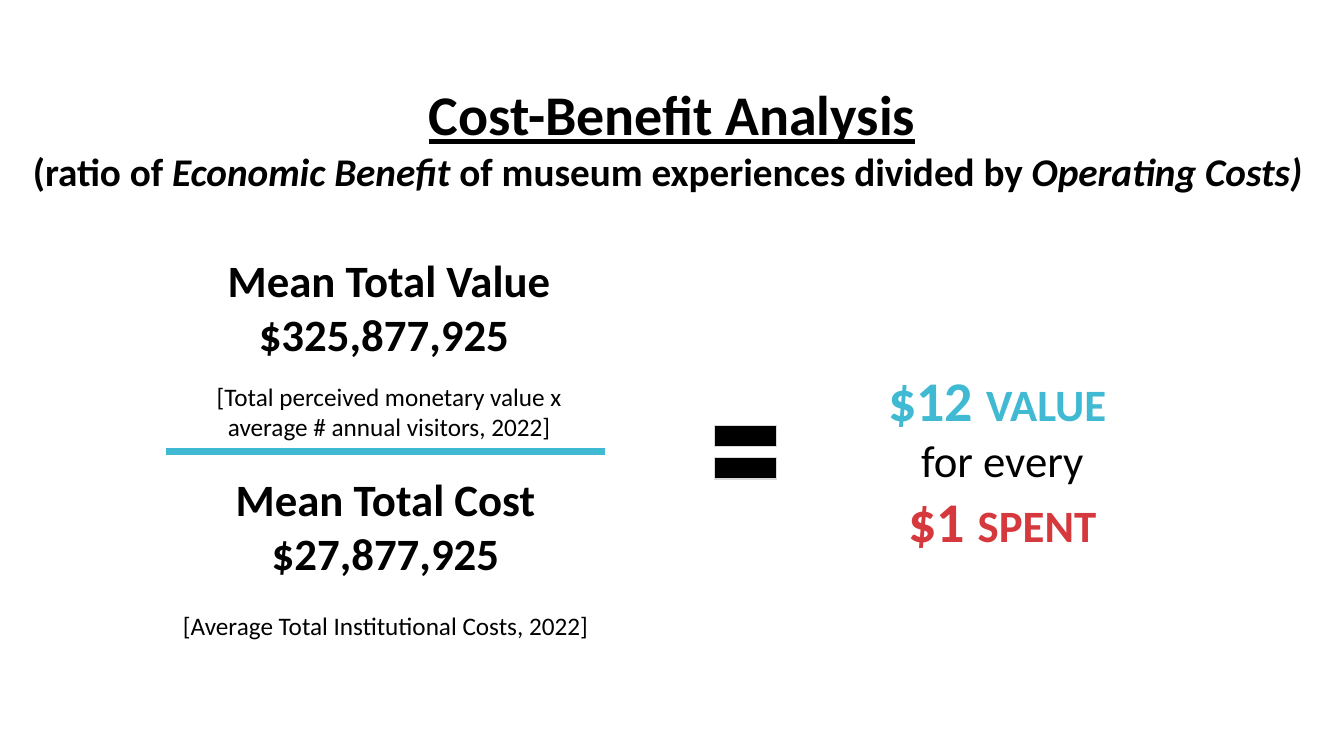
from pptx import Presentation, util as u
from pptx.dml.color import RGBColor
from pptx.enum import shapes, text
from pptx.oxml.ns import qn
from lxml import etree

Pt = u.Pt
HUES = {"black": "000000", "teal": "40BAD2", "red": "D5393D", "edge": "D9D9D9"}


def hue(name):
    return RGBColor.from_string(HUES[name])


def write(shape, box, paras):
    """Place a shape and fill it with (space before, runs) paragraphs."""
    shape.left, shape.top, shape.width, shape.height = [Pt(v) for v in box]
    frame = shape.text_frame
    frame.word_wrap = True
    frame.auto_size = text.MSO_AUTO_SIZE.NONE
    frame.vertical_anchor = text.MSO_ANCHOR.TOP
    for i, (gap, runs) in enumerate(paras):
        para = frame.add_paragraph() if i else frame.paragraphs[0]
        para.alignment = text.PP_ALIGN.CENTER
        para.space_before = Pt(gap)
        for words, size, name, style in runs:
            run = para.add_run()
            run.text = words
            font = run.font
            font.name, font.size = "Calibri", Pt(size)
            font.color.rgb = hue(name)
            font.bold = "b" in style
            font.italic = "i" in style
            font.underline = "u" in style


deck = Presentation()
deck.slide_width, deck.slide_height = Pt(960), Pt(540)
slide = deck.slides.add_slide(deck.slide_layouts[5])

# Title
write(slide.shapes.title, (0, 53.3, 960, 90), [
    (0, [("Cost-Benefit Analysis", 40, "black", "bu")]),
    (0, [("(ratio of ", 28, "black", "b"),
         ("Economic Benefit ", 28, "black", "bi"),
         ("of museum experiences divided by ", 28, "black", "b"),
         ("Operating Costs) ", 28, "black", "bi")]),
])

# Fraction and result
blocks = [
    ((128.2, 177.1, 299.5, 143.3), [
        (0, [("Mean Total Value $325,877,925 ", 32, "black", "b")]),
        (14.6, [("[Total perceived monetary value x average # annual visitors, 2022]",
                 18, "black", "")]),
    ]),
    ((118.8, 333.4, 313.2, 128.2), [
        (0, [("Mean Total Cost", 32, "black", "b")]),
        (0, [("$27,877,925", 32, "black", "b")]),
        (22, [("[Average Total Institutional Costs, 2022]", 18, "black", "")]),
    ]),
    ((584.6, 257.8, 262.8, 143.3), [
        (0, [("$12 ", 40, "teal", "b"), ("VALUE ", 32, "teal", "b")]),
        (0, [("for every", 32, "black", "")]),
        (0, [("$1 ", 40, "red", "b"), ("SPENT", 32, "red", "b")]),
    ]),
]
for box, paras in blocks:
    write(slide.shapes.add_textbox(0, 0, 0, 0), box, paras)

# Fraction bar
bar = slide.shapes.add_connector(
    shapes.MSO_CONNECTOR.STRAIGHT, Pt(118.8), Pt(322.6), Pt(432), Pt(322.6))
bar.line.color.rgb = hue("teal")
bar.line.width = Pt(4.5)
etree.SubElement(bar.element.spPr, qn("a:effectLst"))

# Equals sign
sign = slide.shapes.add_shape(
    shapes.MSO_SHAPE.MATH_EQUAL, Pt(502.6), Pt(290.2), Pt(59.8), Pt(65.5))
sign.shadow.inherit = False
sign.fill.solid()
sign.fill.fore_color.rgb = hue("black")
sign.line.color.rgb = hue("edge")
sign.line.width = Pt(0.85)

deck.save("out.pptx")
